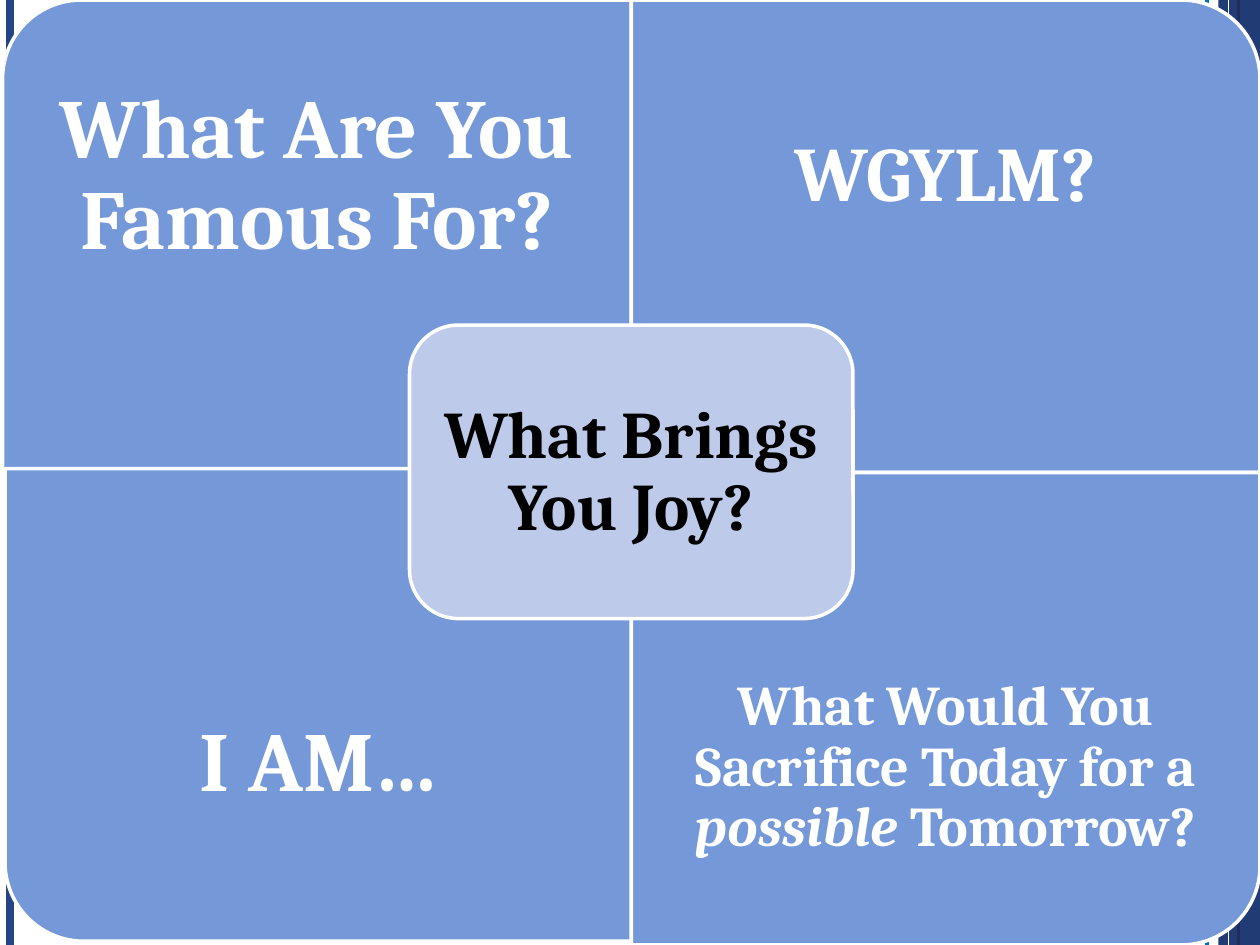
from dataclasses import dataclass

from lxml.etree import SubElement
from pptx import Presentation
from pptx.dml.color import RGBColor
from pptx.enum.shapes import MSO_CONNECTOR as Link, MSO_SHAPE as Kind
from pptx.enum.text import MSO_ANCHOR as Anchor, PP_ALIGN as Align
from pptx.oxml.ns import qn
from pptx.util import Inches, Pt

WHITE, BLUE, PALE, NAVY = "FFFFFF", "7598D9", "BDCAE9", "002060"
Box = tuple[float, float, float, float]


@dataclass
class Rule:
    x: float
    color: str
    width: float


@dataclass
class Panel:
    shape: Box
    turn: int
    area: Box
    inset: float
    size: int
    runs: tuple[str, ...]  # every second run is italic
    kind: Kind = Kind.ROUND_1_RECTANGLE
    fill: str = BLUE
    ink: str = WHITE


RULES = [
    Rule(9.58, "0070C0", 2.75),
    Rule(0.08, "244583", 4.5),
    Rule(9.83, "FE8637", 1.5),
]
PANELS = [
    Panel((0.64, -0.62, 3.75, 4.99), 270, (0.02, 0, 4.99, 2.81), 0.37, 48,
          ("What Are You Famous For?",)),
    Panel((5.01, 0, 4.99, 3.75), 0, (5.01, 0, 4.99, 2.81), 0.34, 44,
          ("WGYLM?",)),
    Panel((0.04, 3.72, 4.99, 3.75), 180, (0.04, 4.66, 4.99, 2.81), 0.37, 48,
          ("I AM…",)),
    Panel((5.63, 3.13, 3.75, 4.99), 90, (5.01, 4.69, 4.99, 2.81), 0.25, 32,
          ("What Would You Sacrifice Today for a ", "possible", " Tomorrow?")),
    Panel((3.25, 2.58, 3.52, 2.33), 0, (3.36, 2.7, 3.3, 2.11), 0.16, 38,
          ("What Brings You Joy?",), Kind.ROUNDED_RECTANGLE, PALE, "000000"),
]


def paint(fmt, color: str) -> None:
    """Give a fill one solid colour."""
    fmt.solid()
    fmt.fore_color.rgb = RGBColor.from_string(color)


def apply(target, values: dict) -> None:
    for name, value in values.items():
        setattr(target, name, value)


def draw_rule(slide, rule: Rule) -> None:
    x = Inches(rule.x)
    line = slide.shapes.add_connector(Link.STRAIGHT, x, 0, x, Inches(7.5))
    paint(line.line.fill, rule.color)
    line.line.width = Pt(rule.width)
    SubElement(line._element.spPr, qn("a:effectLst"))


def draw_shape(slide, kind: Kind, box: Box, fill: str):
    shape = slide.shapes.add_shape(kind, *map(Inches, box))
    shape.shadow.inherit = False
    paint(shape.fill, fill)
    return shape


def draw_band(slide) -> None:
    """Draw the see-through strip along the right edge."""
    band = draw_shape(slide, Kind.RECTANGLE, (9.67, 0, 0.33, 7.5), NAVY)
    band.line.fill.background()
    color = band._element.spPr.find(qn("a:solidFill"))[0]
    SubElement(color, qn("a:alpha"), val="87000")


def draw_panel(slide, panel: Panel) -> None:
    shape = draw_shape(slide, panel.kind, panel.shape, panel.fill)
    shape.rotation = panel.turn
    paint(shape.line.fill, WHITE)
    shape.line.width = Pt(2)

    frame = slide.shapes.add_textbox(*map(Inches, panel.area)).text_frame
    sides = ("left", "top", "right", "bottom")
    apply(frame, {f"margin_{side}": Inches(panel.inset) for side in sides})
    apply(frame, {"word_wrap": True, "vertical_anchor": Anchor.MIDDLE})
    para = frame.paragraphs[0]
    apply(para, {"alignment": Align.CENTER, "line_spacing": 0.9})
    for i, text in enumerate(panel.runs):
        run = para.add_run()
        run.text = text
        apply(run.font, {"name": "Cambria", "size": Pt(panel.size),
                         "bold": True, "italic": i % 2 == 1})
        paint(run.font.fill, panel.ink)


def main() -> None:
    deck = Presentation()
    apply(deck, {"slide_width": Inches(10), "slide_height": Inches(7.5)})
    slide = deck.slides.add_slide(deck.slide_layouts[6])
    paint(slide.background.fill, WHITE)
    for rule in RULES:
        draw_rule(slide, rule)
    draw_band(slide)
    draw_rule(slide, Rule(9.75, WHITE, 1))
    for panel in PANELS:
        draw_panel(slide, panel)
    deck.save("out.pptx")


if __name__ == "__main__":
    main()
